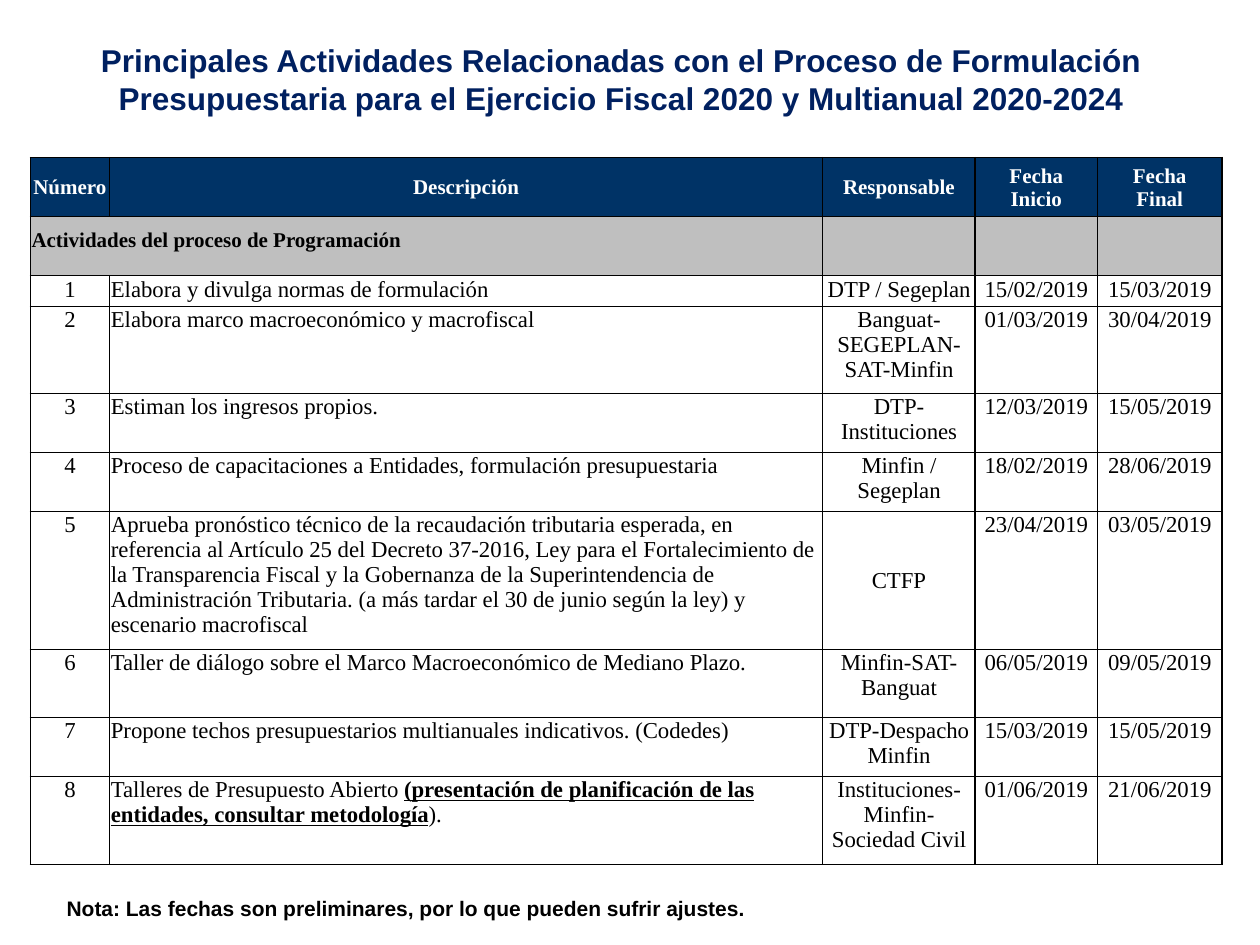
from dataclasses import dataclass

from lxml.etree import SubElement
from pptx import Presentation
from pptx.dml.color import RGBColor
from pptx.enum.text import MSO_ANCHOR, PP_ALIGN
from pptx.oxml.ns import qn
from pptx.util import Inches, Pt

NAVY, HEADER_BLUE, GRAY = "002060", "003366", "BFBFBF"
BLACK, WHITE = "000000", "FFFFFF"
SERIF, SANS = "Times New Roman", "Arial"
COLUMN_WIDTHS = (0.63, 5.66, 1.21, 0.97, 0.99)
HEADERS = ("Número", "Descripción", "Responsable", "Fecha\vInicio", "Fecha\vFinal")
HEADER_HEIGHT = 0.47
THICK_VERTICALS = (0, 3, 5)
EMPHASIS = "(presentación de planificación de las entidades, consultar metodología"


@dataclass
class Activity:
    description: str
    responsible: str
    start: str
    end: str
    height: float = 0.47
    responsible_anchor: MSO_ANCHOR = MSO_ANCHOR.TOP


ACTIVITIES = [
    Activity("Elabora y divulga normas de formulación", "DTP / Segeplan",
             "15/02/2019", "15/03/2019", 0.24),
    Activity("Elabora marco macroeconómico y macrofiscal", "Banguat-SEGEPLAN-SAT-Minfin",
             "01/03/2019", "30/04/2019", 0.69),
    Activity("Estiman los ingresos propios.", "DTP-Instituciones",
             "12/03/2019", "15/05/2019"),
    Activity("Proceso de capacitaciones a Entidades, formulación presupuestaria",
             "Minfin / Segeplan", "18/02/2019", "28/06/2019"),
    Activity("Aprueba pronóstico técnico de la recaudación tributaria esperada, en referencia "
             "al Artículo 25 del Decreto 37-2016, Ley para el Fortalecimiento de la "
             "Transparencia Fiscal y la Gobernanza de la Superintendencia de Administración "
             "Tributaria. (a más tardar el 30 de junio según la ley) y escenario macrofiscal",
             "CTFP", "23/04/2019", "03/05/2019", 1.09, MSO_ANCHOR.MIDDLE),
    Activity("Taller de diálogo sobre el Marco Macroeconómico de Mediano Plazo.",
             "Minfin-SAT-Banguat", "06/05/2019", "09/05/2019", 0.54),
    Activity("Propone techos presupuestarios multianuales indicativos. (Codedes)",
             "DTP-Despacho Minfin", "15/03/2019", "15/05/2019"),
    Activity(f"Talleres de Presupuesto Abierto {EMPHASIS}).",
             "Instituciones-Minfin-Sociedad Civil", "01/06/2019", "21/06/2019", 0.7),
]


def rgb(color: str) -> RGBColor:
    return RGBColor.from_string(color)


def format_run(run, font: str, size: float, color: str, bold: bool) -> None:
    run.font.name = font
    run.font.size = Pt(size)
    run.font.color.rgb = rgb(color)
    run.font.bold = bold


def add_caption(slide, text: str, box: tuple, size: float, color: str,
                align: PP_ALIGN, anchor: MSO_ANCHOR) -> None:
    frame = slide.shapes.add_textbox(*map(Inches, box)).text_frame
    frame.word_wrap = True
    frame.vertical_anchor = anchor
    frame.text = text
    frame.paragraphs[0].alignment = align
    format_run(frame.paragraphs[0].runs[0], SANS, size, color, True)


def draw_borders(cell, row: int, column: int) -> None:
    widths = {
        "a:lnL": 1 if column in THICK_VERTICALS else 0.5,
        "a:lnR": 1 if column + 1 in THICK_VERTICALS else 0.5,
        "a:lnT": 1 if row == 0 else 0.5,
        "a:lnB": 0.5,
    }
    properties = cell._tc.get_or_add_tcPr()
    for tag, width in widths.items():
        line = SubElement(properties, qn(tag), w=str(Pt(width)))
        SubElement(SubElement(line, qn("a:solidFill")), qn("a:srgbClr"), val=BLACK)


def style_cell(cell, row: int, column: int, fill: str = "") -> None:
    cell.margin_left = cell.margin_right = cell.margin_top = Inches(0.01)
    cell.margin_bottom = 0
    draw_borders(cell, row, column)
    if fill:
        cell.fill.solid()
        cell.fill.fore_color.rgb = rgb(fill)
    else:
        cell.fill.background()


def write_cell(cell, text: str, size: float, color: str, bold: bool,
               align: PP_ALIGN, anchor: MSO_ANCHOR) -> None:
    paragraph = cell.text_frame.paragraphs[0]
    before, emphasized, after = text.partition(EMPHASIS)
    paragraph.text = before
    for part in filter(None, (emphasized, after)):
        paragraph.add_run().text = part
    for run in paragraph.runs:
        strong = run.text == EMPHASIS
        format_run(run, SERIF, size, color, bold or strong)
        run.font.underline = strong
    paragraph.alignment = align
    cell.vertical_anchor = anchor


def add_schedule(slide) -> None:
    heights = [HEADER_HEIGHT, HEADER_HEIGHT] + [activity.height for activity in ACTIVITIES]
    schedule = slide.shapes.add_table(
        len(heights), len(COLUMN_WIDTHS), Inches(0.24), Inches(1.25),
        Inches(sum(COLUMN_WIDTHS)), Inches(sum(heights))).table
    for column, width in zip(schedule.columns, COLUMN_WIDTHS):
        column.width = Inches(width)
    for row, height in zip(schedule.rows, heights):
        row.height = Inches(height)

    fills = {0: HEADER_BLUE, 1: GRAY}
    for row in range(len(heights)):
        for column in range(len(COLUMN_WIDTHS)):
            style_cell(schedule.cell(row, column), row, column, fills.get(row, ""))

    for column, header in enumerate(HEADERS):
        write_cell(schedule.cell(0, column), header, 12, WHITE, True,
                   PP_ALIGN.CENTER, MSO_ANCHOR.MIDDLE)
    final_date = schedule.cell(0, 4).text_frame.paragraphs[0]
    final_date._p.get_or_add_pPr().set("indent", str(Inches(-0.2)))

    section = schedule.cell(1, 0)
    section.merge(schedule.cell(1, 1))
    section.margin_bottom = Inches(0.19)
    write_cell(section, "Actividades del proceso de Programación", 12, BLACK, True,
               PP_ALIGN.LEFT, MSO_ANCHOR.BOTTOM)

    for number, activity in enumerate(ACTIVITIES, 1):
        values = (str(number), activity.description, activity.responsible,
                  activity.start, activity.end)
        for column, value in enumerate(values):
            align = PP_ALIGN.LEFT if column == 1 else PP_ALIGN.CENTER
            anchor = activity.responsible_anchor if column == 2 else MSO_ANCHOR.TOP
            write_cell(schedule.cell(number + 1, column), value, 13, BLACK, False,
                       align, anchor)


def main() -> None:
    presentation = Presentation()
    presentation.slide_width, presentation.slide_height = Inches(10), Inches(7.5)
    slide = presentation.slides.add_slide(presentation.slide_layouts[6])
    add_caption(slide, "Principales Actividades Relacionadas con el Proceso de Formulación "
                "Presupuestaria para el Ejercicio Fiscal 2020 y Multianual 2020-2024",
                (0.43, 0, 9, 1.25), 18, NAVY, PP_ALIGN.CENTER, MSO_ANCHOR.MIDDLE)
    add_schedule(slide)
    add_caption(slide, "Nota: Las fechas son preliminares, por lo que pueden sufrir ajustes.",
                (0.43, 7.06, 7.95, 0.3), 12, BLACK, PP_ALIGN.LEFT, MSO_ANCHOR.TOP)
    presentation.save("out.pptx")


if __name__ == "__main__":
    main()
